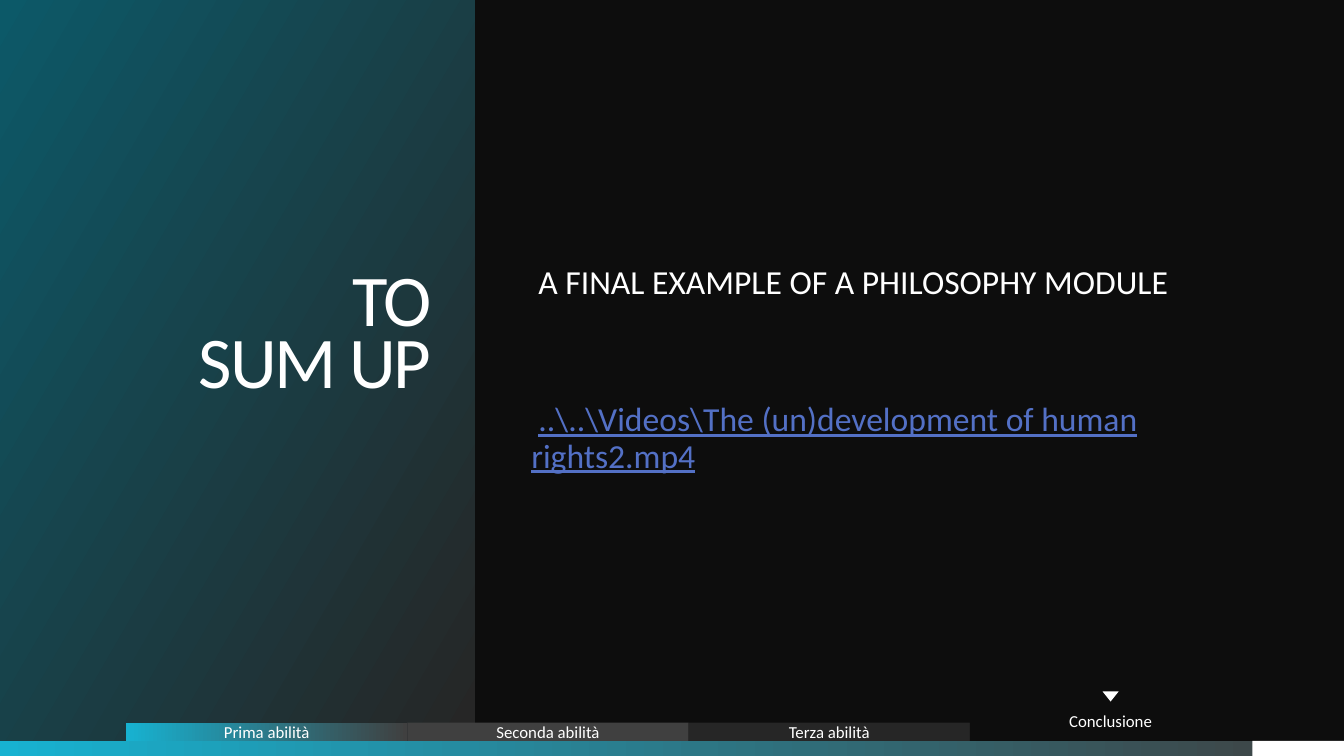
from pptx import Presentation
from pptx.dml.color import RGBColor
from pptx.enum import shapes, text
from pptx.util import Inches, Pt

# Content
TITLE = ["TO", "SUM UP"]
BODY = [  # text, is a link, space before in points
    ("A FINAL EXAMPLE OF A PHILOSOPHY MODULE", False, 0),
    ("..\\..\\Videos\\The (un)development of human rights2.mp4", True, 72),
]
TABS = ["Prima abilità", "Seconda abilità", "Terza abilità", "Conclusione"]

THEME = {
    "font": "Calibri",
    "title": 52, "body": 24, "tab": 12,
    "back": "0D0D0D", "white": "FFFFFF", "link": "5370C5",
    "cyan": "17B2D1", "teal": "0C5968", "grey": "404040", "dark": "262626",
}
RECT = shapes.MSO_SHAPE.RECTANGLE
SLIDE_W, SLIDE_H = 13.33, 7.5
FOOT_H = 0.15
FOOT_Y = SLIDE_H - FOOT_H
TAB_X, TAB_W, TAB_H, ACTIVE_H = 1.25, 2.79, 0.18, 0.39


def color(name):
    return RGBColor.from_string(THEME[name])


def add_block(s, box, fill, kind=RECT):
    """Fill is a colour name, or (first colour, last colour, start, angle)."""
    sp = s.shapes.add_shape(kind, *map(Inches, box))
    sp.shadow.inherit = False
    sp.line.fill.background()
    if isinstance(fill, str):
        sp.fill.solid()
        sp.fill.fore_color.rgb = color(fill)
    else:
        first, last, start, angle = fill
        sp.fill.gradient()
        sp.fill.gradient_angle = angle
        for stop, name, pos in zip(sp.fill.gradient_stops, (first, last), (start, 1)):
            stop.color.rgb = color(name)
            stop.position = pos
    return sp


def set_frame(sp, left, top, right, bottom):
    tf = sp.text_frame
    tf.word_wrap = True
    tf.vertical_anchor = text.MSO_ANCHOR.MIDDLE
    tf.margin_left, tf.margin_top = Inches(left), Inches(top)
    tf.margin_right, tf.margin_bottom = Inches(right), Inches(bottom)
    return tf


def add_run(p, words, size, name="white"):
    r = p.add_run()
    r.text = words
    r.font.name = THEME["font"]
    r.font.size = Pt(THEME[size])
    r.font.color.rgb = color(name)
    return r


def add_title(s):
    sp = add_block(s, (0, 0, 4.71, FOOT_Y), ("dark", "teal", 0.01, 150))
    # The deeper bottom inset lifts the title above the middle
    tf = set_frame(sp, 0.43, 0, 0.43, 0.62)
    p = tf.paragraphs[0]
    p.alignment = text.PP_ALIGN.RIGHT
    p.line_spacing = 0.7
    for i, line in enumerate(TITLE):
        if i:
            p.add_line_break()
        r = add_run(p, line, "title")
        r.font._element.set("spc", "-150")


def add_body(s):
    sp = s.shapes.add_textbox(*map(Inches, (5.15, 0.4, 7.27, 6.55)))
    tf = set_frame(sp, 0.12, 0.12, 0.12, 0.12)
    for i, (words, is_link, before) in enumerate(BODY):
        p = tf.add_paragraph() if i else tf.paragraphs[0]
        p._p.get_or_add_pPr().set("indent", str(Inches(0.07)))
        p.line_spacing = 0.9
        p.space_before = Pt(before)
        r = add_run(p, words, "body", "link" if is_link else "white")
        if is_link:
            r.font.underline = True


def add_tabs(s):
    fills = [("cyan", "grey", 0, 0), "grey", "dark", "back"]
    for i, (label, fill) in enumerate(zip(TABS, fills)):
        h = ACTIVE_H if i == len(TABS) - 1 else TAB_H
        x = TAB_X + i * TAB_W
        sp = add_block(s, (x, FOOT_Y - h, TAB_W, h), fill)
        p = set_frame(sp, 0, 0, 0, 0).paragraphs[0]
        p.alignment = text.PP_ALIGN.CENTER
        add_run(p, label, "tab")
    # Pointer above the active tab
    pointer = add_block(s, (x + TAB_W / 2 - 0.08, 6.86, 0.16, 0.1), "white",
                        shapes.MSO_SHAPE.ISOSCELES_TRIANGLE)
    pointer.rotation = 180


def main():
    prs = Presentation()
    prs.slide_width, prs.slide_height = Inches(SLIDE_W), Inches(SLIDE_H)
    s = prs.slides.add_slide(prs.slide_layouts[6])
    s.background.fill.solid()
    s.background.fill.fore_color.rgb = color("back")

    # Footer strip and page number field
    add_block(s, (0, FOOT_Y, SLIDE_W, FOOT_H), ("cyan", "grey", 0, 0))
    add_block(s, (12.42, FOOT_Y, SLIDE_W - 12.42, FOOT_H), "white")

    add_title(s)
    add_body(s)
    add_tabs(s)
    prs.save("out.pptx")


if __name__ == "__main__":
    main()
